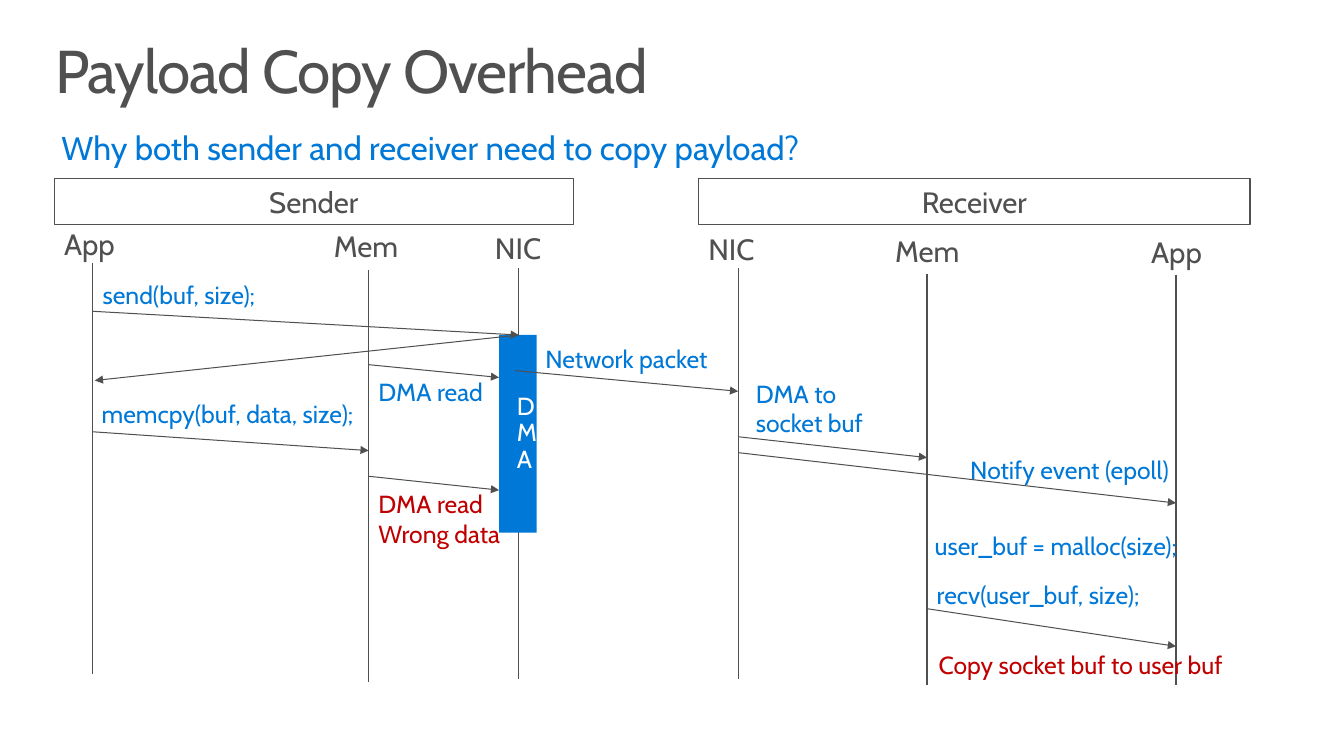
from pptx import Presentation
from pptx.dml.color import RGBColor
from pptx.enum.shapes import MSO_CONNECTOR, MSO_SHAPE
from pptx.enum.text import MSO_ANCHOR, MSO_AUTO_SIZE, PP_ALIGN
from pptx.oxml.ns import qn
from pptx.util import Pt
from lxml import etree

STRAIGHT = MSO_CONNECTOR.STRAIGHT
RECT = MSO_SHAPE.RECTANGLE
TOP, MIDDLE = MSO_ANCHOR.TOP, MSO_ANCHOR.MIDDLE
NO_AUTOSIZE = MSO_AUTO_SIZE.NONE
LEFT, CENTER = PP_ALIGN.LEFT, PP_ALIGN.CENTER

GRAY = RGBColor(0x50, 0x50, 0x50)
BLUE = RGBColor(0x00, 0x78, 0xD7)
RED = RGBColor(0xC0, 0x00, 0x00)
WHITE = RGBColor(0xFF, 0xFF, 0xFF)

FONT = "Cabin"
HEAD_SIZE = 21.4
NOTE_SIZE = 18


def set_text(sp, text, size, color, align=LEFT, anchor=TOP, spacing=None):
    tf = sp.text_frame
    tf.word_wrap = True
    tf.auto_size = NO_AUTOSIZE
    tf.vertical_anchor = anchor
    tf.text = text
    for p in tf.paragraphs:
        p.alignment = align
        p.line_spacing = spacing
        for r in p.runs:
            r.font.name = FONT
            r.font.size = Pt(size)
            r.font.color.rgb = color
    return tf


def add_line(x1, y1, x2, y2, arrow=False):
    line = s.shapes.add_connector(STRAIGHT, Pt(x1), Pt(y1), Pt(x2), Pt(y2))
    line.line.color.rgb = GRAY
    line.line.width = Pt(0.75)
    if arrow:
        ln = line.line._get_or_add_ln()
        etree.SubElement(ln, qn("a:tailEnd"), type="triangle")
    etree.SubElement(line._element.spPr, qn("a:effectLst"))


prs = Presentation()
prs.slide_width, prs.slide_height = Pt(979.2), Pt(550.8)
s = prs.slides.add_slide(prs.slide_layouts[1])

title, body = s.shapes.title, s.placeholders[1]
headings = [
    (title, "Payload Copy Overhead", 44, GRAY, 28.8, 23, 921.6, 72, 11.5),
    (body, "Why both sender and receiver need to copy payload?",
     24, BLUE, 31.7, 89.3, 691.2, 41, 13),
]
for sp, text, size, color, x, y, w, h, inset in headings:
    sp.left, sp.top, sp.width, sp.height = Pt(x), Pt(y), Pt(w), Pt(h)
    tf = set_text(sp, text, size, color, spacing=0.9)
    tf.margin_left = tf.margin_right = Pt(inset)
    tf.margin_top = tf.margin_bottom = Pt(7.2)
    tf.paragraphs[0].space_before = Pt(0)
title.text_frame.paragraphs[0].runs[0]._r.get_or_add_rPr().set("spc", "-80")
pPr = body.text_frame.paragraphs[0]._p.get_or_add_pPr()
pPr.set("marL", "0")
pPr.set("indent", "0")
etree.SubElement(pPr, qn("a:buNone"))

APP_S, MEM_S, NIC_S = 67.7, 268.6, 378
NIC_R, MEM_R, APP_R = 537.8, 675.4, 856.8
lifelines = [
    ("App", 39.6, 161.3, APP_S, 191.5, 491),
    ("Mem", 236.2, 162.7, MEM_S, 196.6, 496.8),
    ("NIC", 353.5, 164.2, NIC_S, 195.1, 494.6),
    ("NIC", 509, 164.9, NIC_R, 195.1, 494.6),
    ("Mem", 645.1, 166.3, MEM_R, 199.4, 499),
    ("App", 831.6, 167, APP_R, 200.2, 499),
]
for name, label_x, label_y, x, top, bottom in lifelines:
    add_line(x, top, x, bottom)
    label = s.shapes.add_textbox(Pt(label_x), Pt(label_y), Pt(126), Pt(33.1))
    set_text(label, name, HEAD_SIZE, GRAY)

for name, x, w in [("Sender", 39.6, 378), ("Receiver", 509, 401.8)]:
    host = s.shapes.add_shape(RECT, Pt(x), Pt(130.3), Pt(w), Pt(33.1))
    host.shadow.inherit = False
    host.fill.solid()
    host.fill.fore_color.rgb = WHITE
    host.line.color.rgb = GRAY
    host.line.width = Pt(0.85)
    set_text(host, name, HEAD_SIZE, GRAY, CENTER, MIDDLE)

DMA_LEFT, DMA_TOP = 363.6, 244.1
dma = s.shapes.add_shape(RECT, Pt(DMA_LEFT), Pt(DMA_TOP), Pt(27.4), Pt(144))
dma.shadow.inherit = False
dma.fill.solid()
dma.fill.fore_color.rgb = BLUE
dma.line.fill.background()
tf = set_text(dma, "DMA", NOTE_SIZE, WHITE, CENTER, MIDDLE, 0.9)
tf.margin_left = tf.margin_right = Pt(14.4)
tf.margin_top = tf.margin_bottom = Pt(11.5)

messages = [
    (APP_S, 226.8, NIC_S, DMA_TOP),
    (NIC_S, DMA_TOP, APP_S + 1.4, 277.2),
    (MEM_S, 265.7, DMA_LEFT, 275),
    (APP_S, 314.6, MEM_S, 328.3),
    (MEM_S, 347, DMA_LEFT, 357.1),
    (375.1, 270, NIC_R, 285.1),
    (NIC_R, 318.2, MEM_R, 333.4),
    (NIC_R, 329.8, APP_R, 366.5),
    (MEM_R, 443.5, APP_R, 470.9),
]
for x1, y1, x2, y2 in messages:
    add_line(x1, y1, x2, y2, arrow=True)

notes = [
    ("send(buf, size);", 67.7, 200.2, 306, 28.8, BLUE),
    ("memcpy(buf, data, size);", 67, 287.3, 306, 28.8, BLUE),
    ("DMA read", 268.6, 270.7, 150.5, 28.8, BLUE),
    ("DMA read\nWrong data", 268.6, 352.8, 306, 51.1, RED),
    ("Network packet", 390.2, 247, 306, 28.8, BLUE),
    ("DMA to\vsocket buf", 543.6, 272.2, 306, 51.1, BLUE),
    ("Notify event (epoll)", 699.8, 327.6, 279, 28.8, BLUE),
    ("user_buf = malloc(size);", 673.9, 383, 199.4, 28.8, BLUE),
    ("recv(user_buf, size);", 675.4, 419, 302, 28.8, BLUE),
    ("Copy socket buf to user buf", 676.8, 470.2, 302, 28.8, RED),
]
for text, x, y, w, h, color in notes:
    note = s.shapes.add_textbox(Pt(x), Pt(y), Pt(w), Pt(h))
    set_text(note, text, NOTE_SIZE, color)

prs.save("out.pptx")
